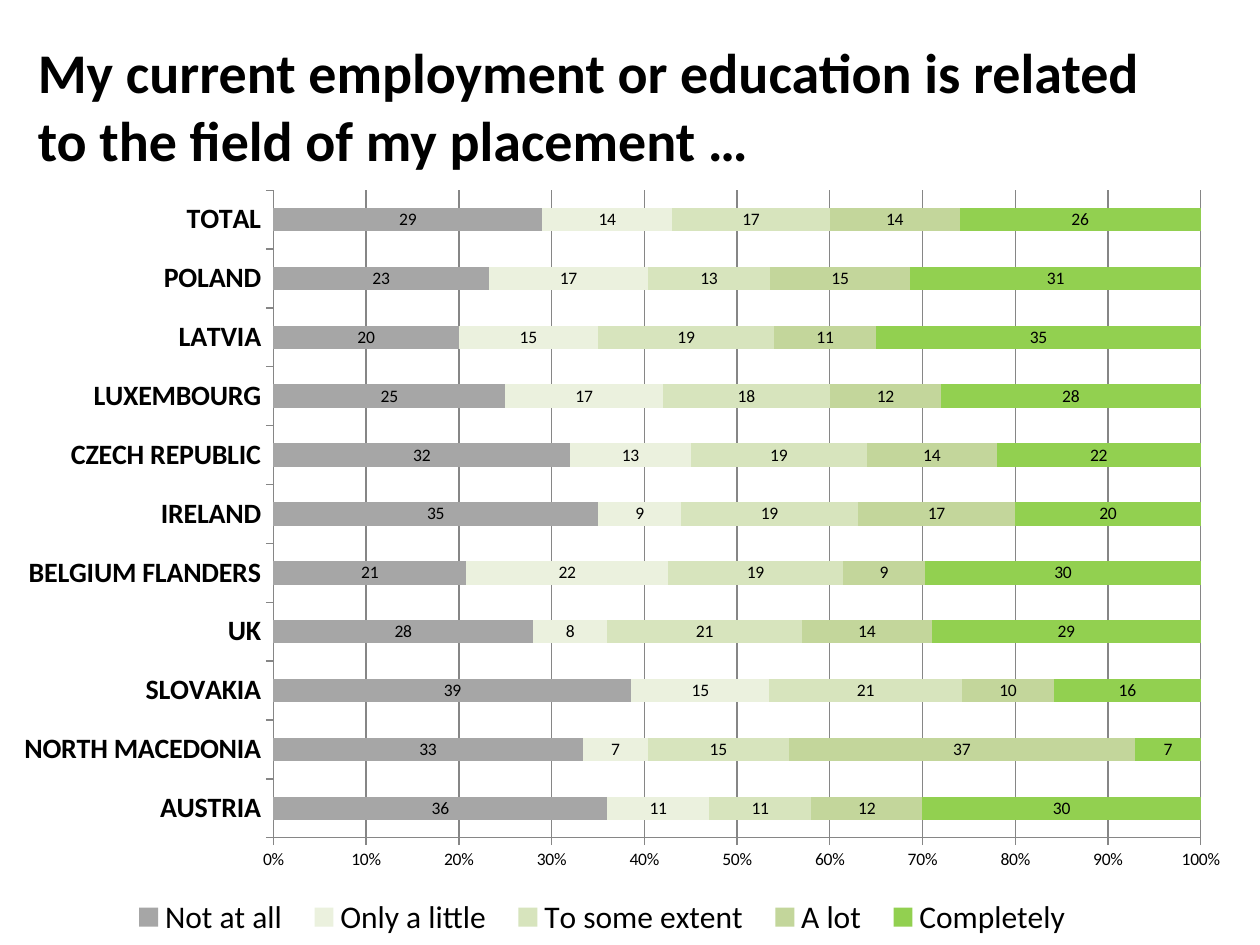
"""Build a slide showing how far employment or education relates to the placement field."""
import dataclasses

import lxml.etree
import pptx
import pptx.chart.chart
import pptx.chart.data
import pptx.chart.series
import pptx.dml.color
import pptx.enum.chart
import pptx.enum.text
import pptx.oxml.ns
import pptx.slide
import pptx.util

Inches = pptx.util.Inches
qn = pptx.oxml.ns.qn


@dataclasses.dataclass(frozen=True)
class Theme:
    font: str = "Calibri"
    text: str = "000000"
    line: str = "868686"
    title_size: int = 32
    legend_size: int = 18
    category_size: int = 16
    chart_size: int = 10


@dataclasses.dataclass(frozen=True)
class Box:
    left: float
    top: float
    width: float
    height: float


@dataclasses.dataclass(frozen=True)
class Answer:
    name: str
    color: str
    values: tuple[int, ...]


THEME = Theme()
TITLE = "My current employment or education is related to the field of my placement …"
TITLE_BOX = Box(0.2, 0.21, 9, 1.25)
CHART_BOX = Box(0, 1.39, 9.88, 6.11)
PLOT_BOX = Box(2.17, 0.12, 7.36, 5.14)
LEGEND_BOX = Box(0.93, 5.67, 7.7, 0.44)
COUNTRIES = (
    "AUSTRIA", "NORTH MACEDONIA", "SLOVAKIA", "UK", "BELGIUM FLANDERS", "IRELAND",
    "CZECH REPUBLIC", "LUXEMBOURG", "LATVIA", "POLAND", "TOTAL",
)
ANSWERS = (
    Answer("Not at all", "A6A6A6", (36, 33, 39, 28, 21, 35, 32, 25, 20, 23, 29)),
    Answer("Only a little", "EBF1DE", (11, 7, 15, 8, 22, 9, 13, 17, 15, 17, 14)),
    Answer("To some extent", "D7E4BD", (11, 15, 21, 21, 19, 19, 19, 18, 19, 13, 17)),
    Answer("A lot", "C3D69B", (12, 37, 10, 14, 9, 17, 14, 12, 11, 15, 14)),
    Answer("Completely", "92D050", (30, 7, 16, 29, 30, 20, 22, 28, 35, 31, 26)),
)


def rgb(color: str) -> pptx.dml.color.RGBColor:
    return pptx.dml.color.RGBColor.from_string(color)


def lengths(box: Box) -> list[pptx.util.Length]:
    return [Inches(value) for value in dataclasses.astuple(box)]


def style_font(font, size: int, bold: bool = False) -> None:
    font.name = THEME.font
    font.size = pptx.util.Pt(size)
    font.bold = bold
    font.color.rgb = rgb(THEME.text)


def add_title(page: pptx.slide.Slide) -> None:
    title = page.shapes.title
    title.left, title.top, title.width, title.height = lengths(TITLE_BOX)
    frame = title.text_frame
    frame.text = TITLE
    frame.word_wrap = True
    frame.vertical_anchor = pptx.enum.text.MSO_ANCHOR.MIDDLE
    para = frame.paragraphs[0]
    para.alignment = pptx.enum.text.PP_ALIGN.LEFT
    style_font(para.font, THEME.title_size, bold=True)


def place_part(chart: pptx.chart.chart.Chart, tag: str, box: Box, index: int,
               target: dict[str, str]) -> None:
    part = chart.element.find(".//" + qn(tag))
    for old in part.findall(qn("c:layout")):
        part.remove(old)
    layout = lxml.etree.Element(qn("c:layout"))
    manual = lxml.etree.SubElement(layout, qn("c:manualLayout"))
    settings = {
        **target, "xMode": "edge", "yMode": "edge",
        "x": box.left / CHART_BOX.width, "y": box.top / CHART_BOX.height,
        "w": box.width / CHART_BOX.width, "h": box.height / CHART_BOX.height,
    }
    for name, value in settings.items():
        lxml.etree.SubElement(manual, qn(f"c:{name}"), val=str(value))
    part.insert(index, layout)


def style_axes(chart: pptx.chart.chart.Chart) -> None:
    for axis in (chart.category_axis, chart.value_axis):
        axis.major_tick_mark = pptx.enum.chart.XL_TICK_MARK.OUTSIDE
        axis.format.line.color.rgb = rgb(THEME.line)
    style_font(chart.category_axis.tick_labels.font, THEME.category_size, bold=True)
    scale = chart.value_axis
    scale.minimum_scale, scale.maximum_scale, scale.major_unit = 0, 1, 0.1
    scale.has_major_gridlines = True
    scale.major_gridlines.format.line.color.rgb = rgb(THEME.line)
    style_font(scale.tick_labels.font, THEME.chart_size)
    scale.tick_labels.number_format = "0%"
    scale.tick_labels.number_format_is_linked = False


def style_series(series: pptx.chart.series.BarSeries, answer: Answer) -> None:
    series.format.fill.solid()
    series.format.fill.fore_color.rgb = rgb(answer.color)
    labels = series.data_labels
    labels.show_value = True
    labels.position = pptx.enum.chart.XL_LABEL_POSITION.CENTER
    labels.number_format = "0"
    labels.number_format_is_linked = False
    style_font(labels.font, THEME.chart_size)


def add_answer_chart(page: pptx.slide.Slide) -> None:
    data = pptx.chart.data.CategoryChartData(number_format="0")
    data.categories = COUNTRIES
    for answer in ANSWERS:
        data.add_series(answer.name, answer.values)
    chart = page.shapes.add_chart(
        pptx.enum.chart.XL_CHART_TYPE.BAR_STACKED_100, *lengths(CHART_BOX), data
    ).chart
    style_font(chart.font, THEME.chart_size)
    chart.has_title = False
    chart.has_legend = True
    chart.legend.position = pptx.enum.chart.XL_LEGEND_POSITION.BOTTOM
    chart.legend.include_in_layout = False
    style_font(chart.legend.font, THEME.legend_size)
    plot = chart.plots[0]
    plot.gap_width, plot.overlap = 150, 100
    plot.vary_by_categories = False
    for series, answer in zip(plot.series, ANSWERS):
        style_series(series, answer)
    style_axes(chart)
    place_part(chart, "c:plotArea", PLOT_BOX, 0, {"layoutTarget": "inner"})
    place_part(chart, "c:legend", LEGEND_BOX, 1, {})


def main() -> None:
    deck = pptx.Presentation()
    deck.slide_width, deck.slide_height = Inches(10), Inches(7.5)
    page = deck.slides.add_slide(deck.slide_layouts.get_by_name("Title Only"))
    add_title(page)
    add_answer_chart(page)
    deck.save("out.pptx")


if __name__ == "__main__":
    main()
